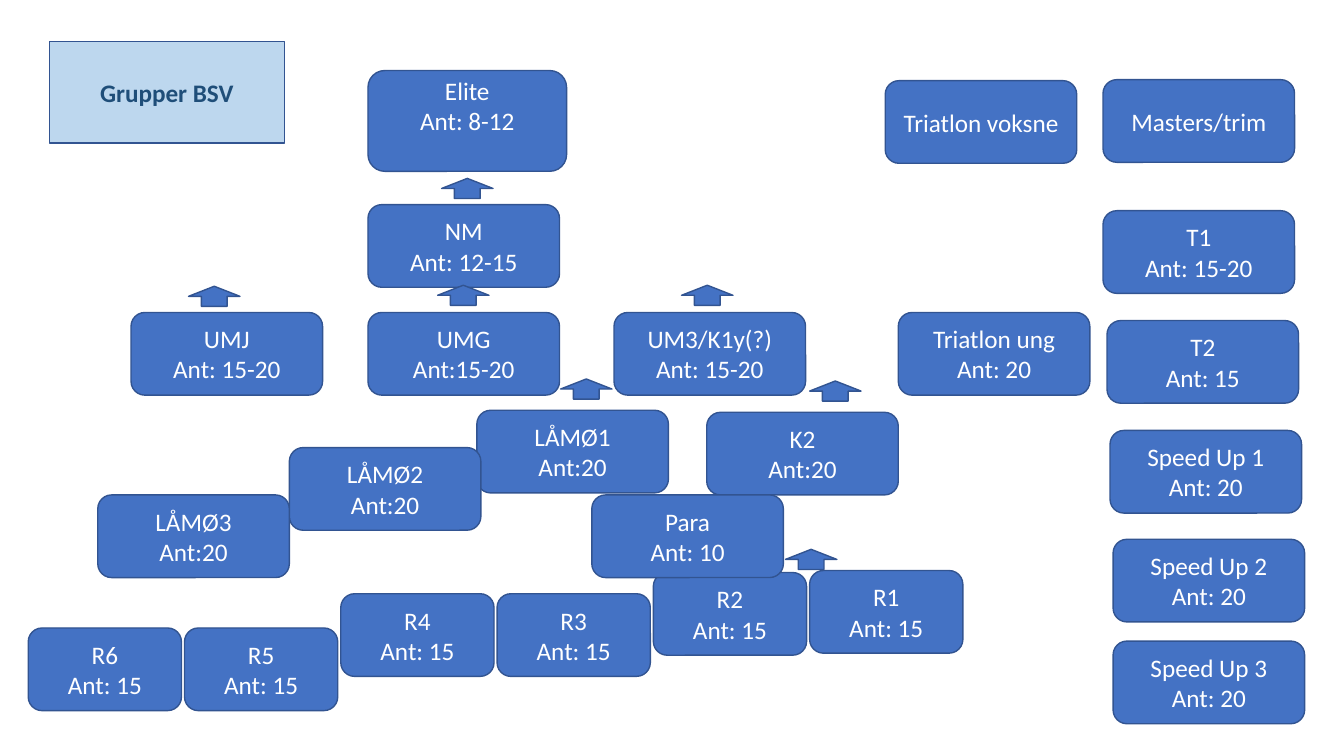
from pptx import Presentation
from pptx.dml.color import RGBColor
from pptx.enum.shapes import MSO_SHAPE as Shape
from pptx.enum.text import MSO_ANCHOR as Anchor, MSO_AUTO_SIZE as AutoSize, PP_ALIGN as Align
from pptx.oxml import parse_xml
from pptx.oxml.ns import nsdecls
from pptx.util import Inches, Pt

# Content: text, left, top of each group, from back to front
TITLE = "Grupper BSV"
ELITE = "Elite\nAnt: 8-12"
TEAMS = [
    ("NM\nAnt: 12-15", 3.65, 2.03),
    ("UMJ\nAnt: 15-20", 1.3, 3.1),
    ("UMG\nAnt:15-20", 3.65, 3.1),
    ("UM3/K1y(?)\nAnt: 15-20", 6.09, 3.1),
    ("Triatlon ung\nAnt: 20", 8.91, 3.1),
    ("LÅMØ1\nAnt:20", 4.73, 4.07),
    ("LÅMØ2\nAnt:20", 2.87, 4.44),
    ("LÅMØ3\nAnt:20", 0.97, 4.91),
    ("K2\nAnt:20", 7.01, 4.09),
    ("Triatlon voksne", 8.78, 0.8),
    ("Masters/trim", 10.94, 0.79),
    ("T1\nAnt: 15-20", 10.94, 2.09),
    ("T2\nAnt: 15", 10.98, 3.18),
    ("Speed Up 1\nAnt: 20", 11.01, 4.27),
    ("Speed Up 2\nAnt: 20", 11.04, 5.35),
    ("Speed Up 3\nAnt: 20", 11.04, 6.36),
]
RECRUIT_TOPS = [6.23, 6.23, 5.89, 5.89, 5.68, 5.66]  # R6 down to R1
PARA = ("Para\nAnt: 10", 5.87, 4.91)
ARROWS = [(4.38, 1.77), (1.87, 2.84), (4.34, 2.83), (6.76, 2.83),
          (8.03, 3.78), (5.56, 3.76), (7.79, 5.45)]

# Sizes and colours
TEAM_SIZE = (1.9, 0.82)
RECRUIT_SIZE = (1.52, 0.82)
ARROW_SIZE = (0.51, 0.2)
RECRUIT_LEFT, RECRUIT_STEP = 0.28, 1.55
BLUE, PALE, EDGE, WHITE, NAVY = "4472C4", "BDD7EE", "325491", "FFFFFF", "1F4E79"


def color(value):
    return RGBColor.from_string(value)


def paint(shape, fill):
    shape.fill.solid()
    shape.fill.fore_color.rgb = color(fill)
    shape.line.color.rgb = color(EDGE)
    shape.line.width = Pt(1)


def write(shape, text, size=18, font_color=WHITE, bold=False, bottom=0.05):
    frame = shape.text_frame
    frame.text = text
    frame.word_wrap = True
    frame.auto_size = AutoSize.NONE
    frame.vertical_anchor = Anchor.MIDDLE
    frame.margin_bottom = Inches(bottom)
    for paragraph in frame.paragraphs:
        paragraph.alignment = Align.CENTER
        font = paragraph.font
        font.name, font.size, font.bold = "Calibri", Pt(size), bold
        font.color.rgb = color(font_color)


def add_block(kind, left, top, size):
    shape = slide.shapes.add_shape(kind, *map(Inches, (left, top, *size)))
    shape.shadow.inherit = False
    paint(shape, BLUE)
    return shape


def add_group(text, left, top, size=TEAM_SIZE, **text_format):
    write(add_block(Shape.ROUNDED_RECTANGLE, left, top, size), text, **text_format)


presentation = Presentation()
presentation.slide_width, presentation.slide_height = Inches(13.33), Inches(7.5)
slide = presentation.slides.add_slide(presentation.slide_layouts[5])

# Title in a parallelogram
title = slide.shapes.title
title.left, title.top, title.width, title.height = map(Inches, (0.49, 0.41, 2.33, 1.01))
title.element.spPr.append(parse_xml(
    f'<a:prstGeom {nsdecls("a")} prst="parallelogram"><a:avLst/></a:prstGeom>'))
paint(title, PALE)
write(title, TITLE, font_color=NAVY, bold=True)

# Groups, with the elite text raised above the middle
add_group(ELITE, 3.65, 0.7, (1.97, 1), bottom=0.35)
for team in TEAMS:
    add_group(*team)

# Recruit staircase from R6 up to R1
for index, top in enumerate(RECRUIT_TOPS):
    number = len(RECRUIT_TOPS) - index
    add_group(f"R{number}\nAnt: 15", RECRUIT_LEFT + index * RECRUIT_STEP, top, RECRUIT_SIZE)
add_group(*PARA)

# Promotion arrows
for left, top in ARROWS:
    add_block(Shape.UP_ARROW, left, top, ARROW_SIZE)

presentation.save("out.pptx")
